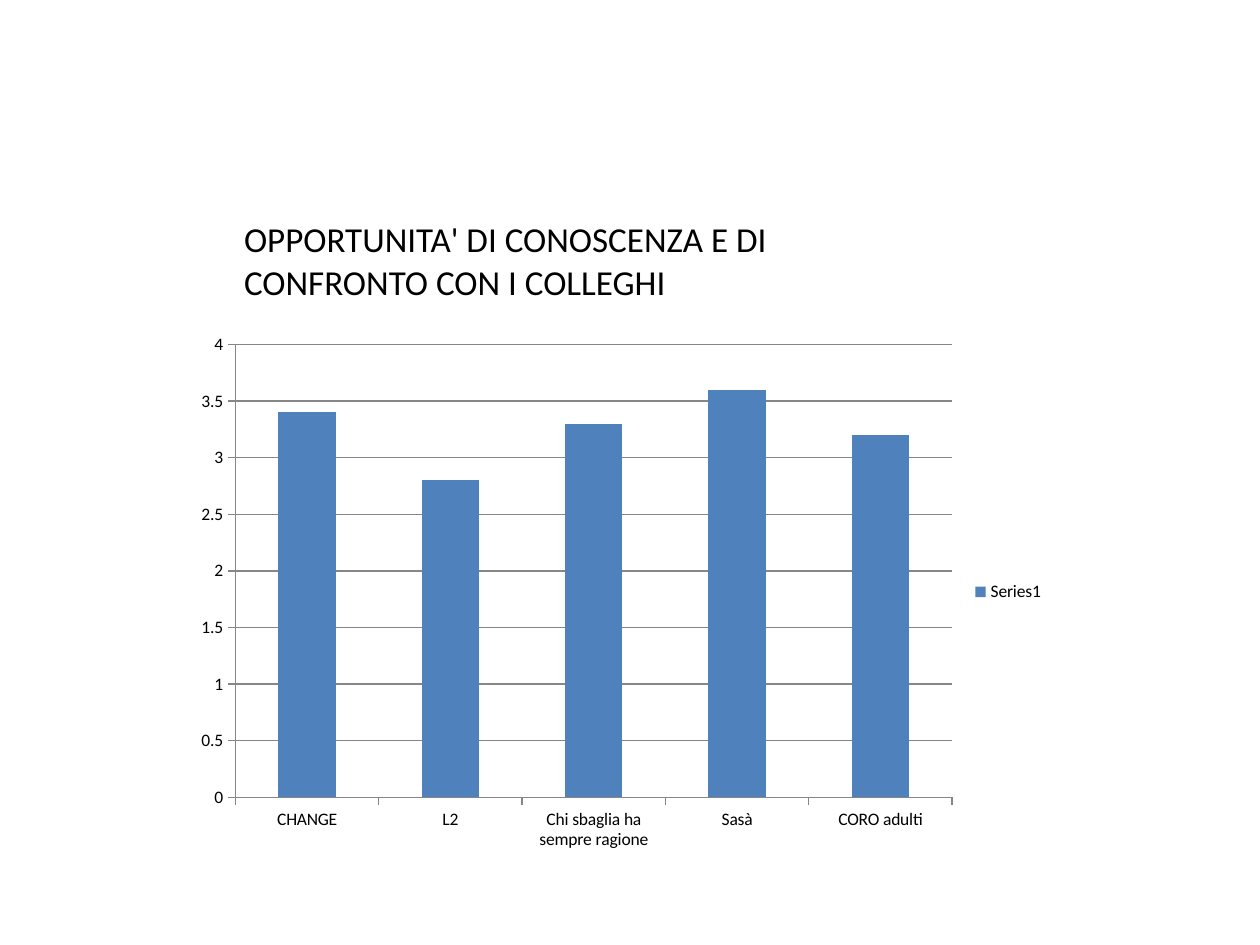
from pptx import Presentation
from pptx import util as u
from pptx.chart.data import CategoryChartData
from pptx.dml.color import RGBColor
from pptx.enum import chart as charts, text

SCALE = 914400 / 126  # EMU per px
COLORS = {"ink": "000000", "bar": "4F81BD", "axis": "868686"}
FONT = "Calibri"


def px(*lengths):
    return [u.Emu(round(length * SCALE)) for length in lengths]


def write(frame, words, size, color, anchor):
    frame.word_wrap = True
    frame.vertical_anchor = anchor
    para = frame.paragraphs[0]
    span = para.add_run()
    span.text = words
    span.font.size = u.Pt(size)
    span.font.name = FONT
    span.font.color.rgb = RGBColor.from_string(color)


# Page
deck = Presentation()
deck.slide_width, deck.slide_height = px(1260, 945)
page = deck.slides.add_slide(deck.slide_layouts[6])

# Column chart
data = CategoryChartData()
data.categories = ["CHANGE", "L2", "Chi sbaglia ha sempre ragione", "Sasà", "CORO adulti"]
data.add_series("Series1", [3.4, 2.8, 3.3, 3.6, 3.2])
chart = page.shapes.add_chart(
    charts.XL_CHART_TYPE.COLUMN_CLUSTERED, *px(184, 324, 873, 536), data
).chart
chart.has_title = False
chart.font.size = u.Pt(10)
chart.font.name = FONT
chart.font.color.rgb = RGBColor.from_string(COLORS["ink"])
chart.has_legend = True
chart.legend.position = charts.XL_LEGEND_POSITION.RIGHT
chart.legend.include_in_layout = False

# Bars
plot = chart.plots[0]
plot.gap_width = 150
plot.vary_by_categories = False
bars = plot.series[0].format.fill
bars.solid()
bars.fore_color.rgb = RGBColor.from_string(COLORS["bar"])

# Axes and gridlines
scores = chart.value_axis
scores.minimum_scale, scores.maximum_scale, scores.major_unit = 0, 4, 0.5
scores.has_major_gridlines = True
for axis in (chart.category_axis, scores):
    axis.major_tick_mark = charts.XL_TICK_MARK.OUTSIDE
for part in (chart.category_axis, scores, scores.major_gridlines):
    part.format.line.color.rgb = RGBColor.from_string(COLORS["axis"])
    part.format.line.width = u.Pt(0.75)

# Heading in a one-cell table
table = page.shapes.add_table(1, 1, *px(243, 116, 704, 189)).table
table.first_row = table.horz_banding = False
cell = table.cell(0, 0)
cell.fill.background()
cell.margin_left, cell.margin_top, cell.margin_right, cell.margin_bottom = px(1, 1, 1, 0)
cell.vertical_anchor = text.MSO_ANCHOR.BOTTOM
write(cell.text_frame, "OPPORTUNITA' DI CONOSCENZA E DI CONFRONTO CON I COLLEGHI",
      size=20, color=COLORS["ink"], anchor=text.MSO_ANCHOR.BOTTOM)

deck.save("out.pptx")
